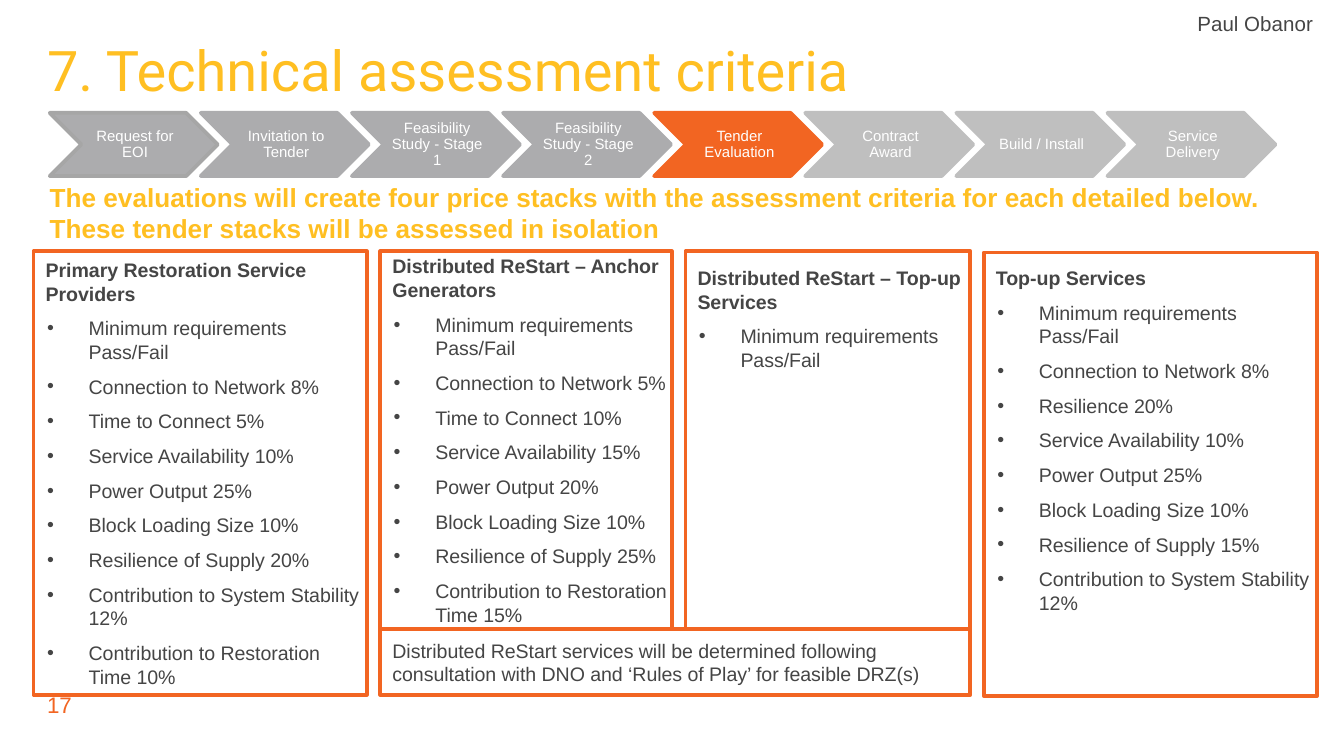
from dataclasses import dataclass

from lxml import etree
from pptx import Presentation
from pptx.dml.color import RGBColor as RGB
from pptx.enum.shapes import MSO_SHAPE as SHAPE
from pptx.enum.text import MSO_ANCHOR as ANCHOR, PP_ALIGN as ALIGN
from pptx.oxml.ns import qn
from pptx.util import Inches, Pt


@dataclass(frozen=True)
class Theme:
    yellow: str = "FFBF22"
    orange: str = "F26522"
    text: str = "454545"
    white: str = "FFFFFF"
    done: str = "ACACAE"
    first_edge: str = "A6A6A6"
    future: str = "BFBFBF"
    body_font: str = "Arial"
    title_font: str = "Roboto"
    title: float = 30
    lead: float = 14
    page: float = 12
    author: float = 11
    body: float = 10.5
    step: float = 8


T = Theme()

STEPS = [
    ("Request for EOI", T.done, T.first_edge),
    ("Invitation to Tender", T.done, T.done),
    ("Feasibility Study - Stage 1", T.done, T.done),
    ("Feasibility Study - Stage 2", T.done, T.done),
    ("Tender Evaluation", T.orange, T.orange),
    ("Contract Award", T.future, T.future),
    ("Build / Install", T.future, T.future),
    ("Service Delivery", T.future, T.future),
]

PASS_FAIL = "Minimum requirements Pass/Fail"
STABILITY = "Contribution to System Stability 12%"

STACKS = [
    ((0.25, 1.87, 2.48, 3.3), ANCHOR.MIDDLE, 0, "Primary Restoration Service Providers", [
        PASS_FAIL, "Connection to Network 8%", "Time to Connect 5%",
        "Service Availability 10%", "Power Output 25%", "Block Loading Size 10%",
        "Resilience of Supply 20%", STABILITY, "Contribution to Restoration Time 10%"]),
    ((2.83, 1.87, 2.17, 2.81), ANCHOR.MIDDLE, 0, "Distributed ReStart – Anchor Generators", [
        PASS_FAIL, "Connection to Network 5%", "Time to Connect 10%",
        "Service Availability 15%", "Power Output 20%", "Block Loading Size 10%",
        "Resilience of Supply 25%", "Contribution to Restoration Time 15%"]),
    ((5.1, 1.87, 2.12, 2.81), ANCHOR.TOP, 0.11, "Distributed ReStart – Top-up Services",
     [PASS_FAIL]),
    ((7.32, 1.88, 2.48, 3.3), ANCHOR.TOP, 0.1, "Top-up Services", [
        PASS_FAIL, "Connection to Network 8%", "Resilience 20%",
        "Service Availability 10%", "Power Output 25%", "Block Loading Size 10%",
        "Resilience of Supply 15%", STABILITY]),
]

NOTE = ("Distributed ReStart services will be determined following consultation "
        "with DNO and ‘Rules of Play’ for feasible DRZ(s)")
LEAD = ("The evaluations will create four price stacks with the assessment criteria "
        "for each detailed below. These tender stacks will be assessed in isolation")


def set_all(obj, values):
    for name, value in values.items():
        setattr(obj, name, value)


def set_frame(tf, anchor=ANCHOR.TOP, left=0, top=0, right=0, bottom=0):
    set_all(tf, {
        "word_wrap": True, "vertical_anchor": anchor,
        "margin_left": Inches(left), "margin_top": Inches(top),
        "margin_right": Inches(right), "margin_bottom": Inches(bottom),
    })


def write(p, text, size, color, bold=False, font=T.body_font, **layout):
    set_all(p, {"alignment": ALIGN.LEFT, **layout})
    r = p.add_run()
    r.text = text
    set_all(r.font, {"name": font, "size": Pt(size), "bold": bold})
    r.font.color.rgb = RGB.from_string(color)


def indent(p, left, first=0, bullet=None):
    pPr = p._p.get_or_add_pPr()
    pPr.set("marL", str(Inches(left)))
    pPr.set("indent", str(Inches(first)))
    if bullet:
        etree.SubElement(pPr, qn("a:buFont")).set("typeface", T.body_font)
        etree.SubElement(pPr, qn("a:buChar")).set("char", bullet)


def add_text(s, box, text, size, color, frame=None, **style):
    tf = s.shapes.add_textbox(*map(Inches, box)).text_frame
    set_frame(tf, **(frame or {}))
    write(tf.paragraphs[0], text, size, color, **style)


def add_outline(s, kind, box, fill, line):
    sp = s.shapes.add_shape(kind, *map(Inches, box))
    sp.shadow.inherit = False
    sp.fill.solid()
    sp.fill.fore_color.rgb = RGB.from_string(fill)
    sp.line.color.rgb = RGB.from_string(line)
    sp.line.width = Pt(2)
    return sp


def add_steps(s):
    left, last = 0.37, 8.24
    pitch = (last - left) / (len(STEPS) - 1)
    frame = {"anchor": ANCHOR.MIDDLE, "left": 0.04, "top": 0.01, "right": 0.01, "bottom": 0.01}
    for i, (label, fill, line) in enumerate(STEPS):
        x = left + i * pitch
        add_outline(s, SHAPE.CHEVRON, (x, 0.84, 1.25, 0.47), fill, line)
        add_text(s, (x + 0.23, 0.84, 0.78, 0.47), label, T.step, T.white,
                 frame, alignment=ALIGN.CENTER, line_spacing=0.9)


def add_panel(s, box, text, bold=False, anchor=ANCHOR.MIDDLE, top=0, items=()):
    tf = add_outline(s, SHAPE.RECTANGLE, box, T.white, T.orange).text_frame
    set_frame(tf, anchor, top=top)
    p = tf.paragraphs[0]
    indent(p, 0.09)
    write(p, text, T.body, T.text, bold, space_after=Pt(6))
    for item in items:
        p = tf.add_paragraph()
        indent(p, 0.41, -0.31, "•")
        write(p, item, T.body, T.text, space_after=Pt(6))


def main():
    prs = Presentation()
    width = Inches(10)
    set_all(prs, {"slide_width": width, "slide_height": width * 9 // 16})
    s = prs.slides.add_slide(prs.slide_layouts[6])
    add_text(s, (0.35, 5.14, 0.91, 0.2), "17", T.page, T.orange)
    add_text(s, (0.35, 0.36, 9.29, 0.32), "7. Technical assessment criteria",
             T.title, T.yellow, font=T.title_font, line_spacing=0.8)
    add_steps(s)
    add_text(s, (0.37, 1.35, 9.43, 0.74), LEAD, T.lead, T.yellow, bold=True)
    for box, anchor, top, heading, items in STACKS:
        add_panel(s, box, heading, True, anchor, top, items)
    add_panel(s, (2.83, 4.68, 4.39, 0.49), NOTE)
    add_text(s, (8.91, 0.08, 1.04, 0.19), "Paul Obanor", T.author, T.text)
    prs.save("out.pptx")


if __name__ == "__main__":
    main()
